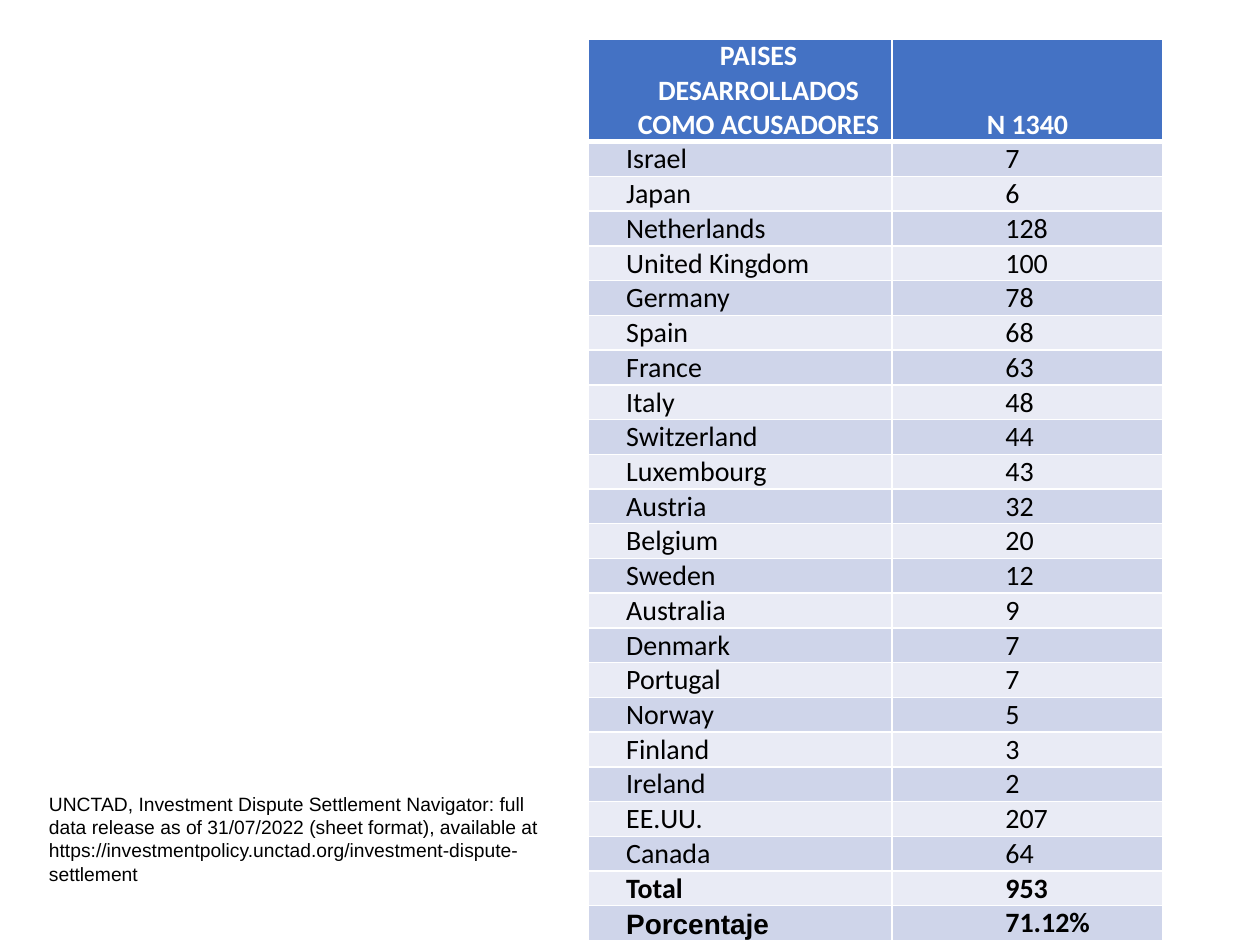
from lxml.etree import SubElement
from pptx import Presentation
from pptx.dml.color import RGBColor
from pptx.enum.text import MSO_ANCHOR, MSO_AUTO_SIZE, PP_ALIGN
from pptx.oxml.ns import qn
from pptx.util import Inches, Pt


def color(value):
    return RGBColor.from_string(value)


def write(frame, text, size=16, font="Calibri", ink="000000", bold=False, align=PP_ALIGN.LEFT):
    frame.text = text
    frame.word_wrap = True
    for paragraph in frame.paragraphs:
        paragraph.alignment = align
        for run in paragraph.runs:
            run.font.size = Pt(size)
            run.font.name = font
            run.font.bold = bold
            run.font.color.rgb = color(ink)


rows = [
    ("PAISES DESARROLLADOS\nCOMO ACUSADORES", "N 1340"),
    ("Israel", "7"),
    ("Japan", "6"),
    ("Netherlands", "128"),
    ("United Kingdom", "100"),
    ("Germany", "78"),
    ("Spain", "68"),
    ("France", "63"),
    ("Italy", "48"),
    ("Switzerland", "44"),
    ("Luxembourg", "43"),
    ("Austria", "32"),
    ("Belgium", "20"),
    ("Sweden", "12"),
    ("Australia", "9"),
    ("Denmark", "7"),
    ("Portugal", "7"),
    ("Norway", "5"),
    ("Finland", "3"),
    ("Ireland", "2"),
    ("EE.UU.", "207"),
    ("Canada", "64"),
    ("Total", "953"),
    ("Porcentaje", "71.12%"),
]
summary_labels = ("Total", "Porcentaje")
table_height = 7.15
header_height = 0.81
country_height = (table_height - header_height) / (len(rows) - 1)

prs = Presentation()
prs.slide_width = Inches(10)
prs.slide_height = Inches(7.5)
slide = prs.slides.add_slide(prs.slide_layouts[6])

claims = slide.shapes.add_table(
    len(rows), 2, Inches(4.67), Inches(0.31), Inches(4.56), Inches(table_height)
).table
claims.columns[0].width = Inches(2.41)
claims.columns[1].width = Inches(2.15)

for r, (country, count) in enumerate(rows):
    header = r == 0
    claims.rows[r].height = Inches(header_height if header else country_height)
    fill = "4472C4" if header else ("E9EBF5", "CFD5EA")[r % 2]
    for c, text in enumerate((country, count)):
        cell = claims.cell(r, c)
        cell.fill.solid()
        cell.fill.fore_color.rgb = color(fill)
        cell.vertical_anchor = MSO_ANCHOR.BOTTOM
        cell.margin_left = Inches(0.3 if c == 0 else 0.01 if header else 0.9)
        cell.margin_right = Inches(0.01)
        cell.margin_top = cell.margin_bottom = Inches(0)
        write(
            cell.text_frame,
            text,
            font="Arial" if text == "Porcentaje" else "Calibri",
            ink="FFFFFF" if header else "000000",
            bold=header or country in summary_labels,
            align=PP_ALIGN.CENTER if header else (PP_ALIGN.LEFT, PP_ALIGN.JUSTIFY)[c],
        )
        properties = cell._tc.get_or_add_tcPr()
        edges = {"a:lnL": 1, "a:lnR": 1, "a:lnT": 3 if r == 1 else 1, "a:lnB": 3 if header else 1}
        for position, (edge, weight) in enumerate(edges.items()):
            border = SubElement(properties, qn(edge), w=str(Pt(weight)))
            SubElement(SubElement(border, qn("a:solidFill")), qn("a:srgbClr"), val="FFFFFF")
            properties.insert(position, border)

citation = slide.shapes.add_textbox(
    Inches(0.29), Inches(6.24), Inches(4.1), Inches(0.84)
).text_frame
citation.auto_size = MSO_AUTO_SIZE.SHAPE_TO_FIT_TEXT
write(
    citation,
    "UNCTAD, Investment Dispute Settlement Navigator: full data release as of "
    "31/07/2022 (sheet format), available at "
    "https://investmentpolicy.unctad.org/investment-dispute-settlement",
    size=11,
    font="Arial",
)

prs.save("out.pptx")
